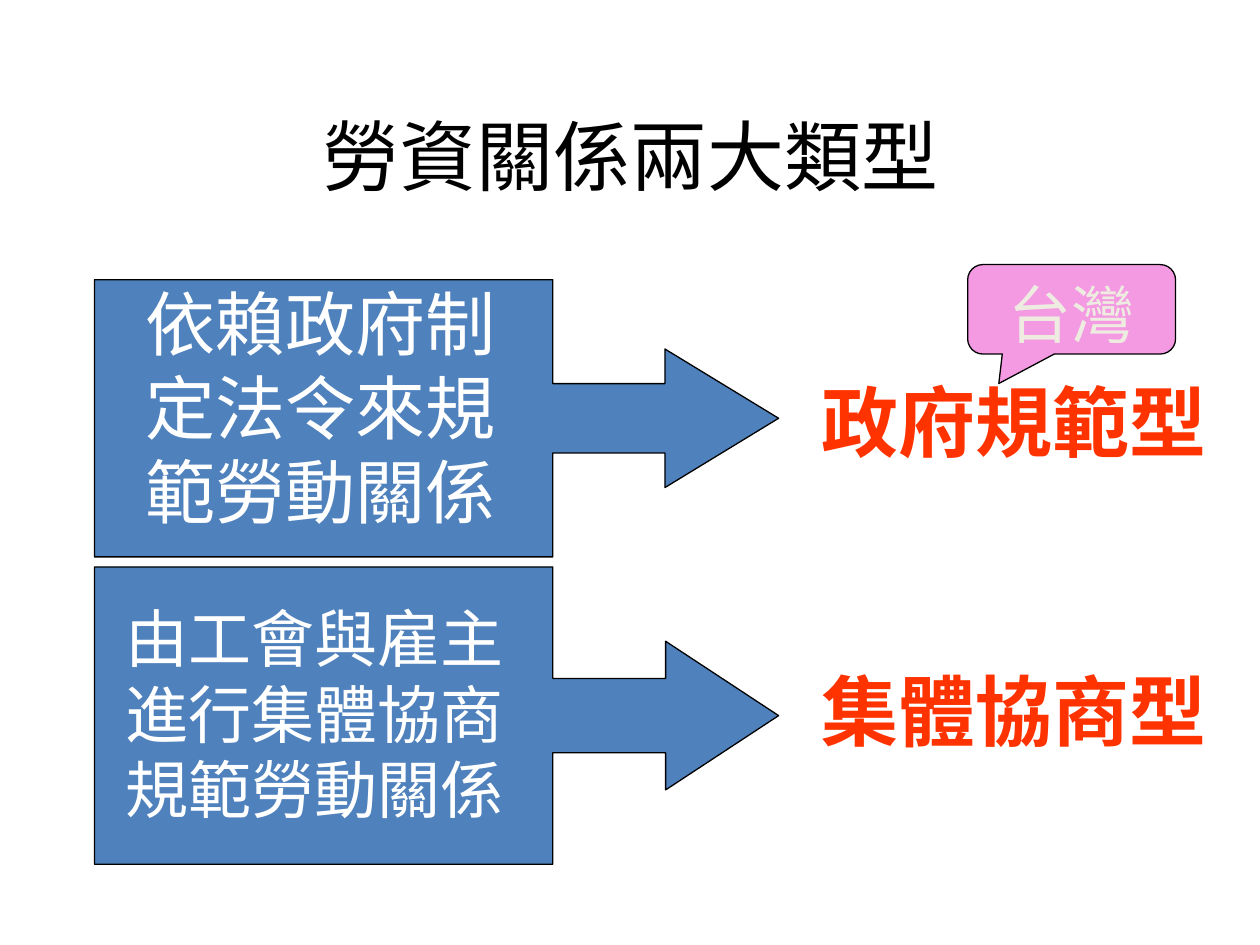
from pptx import Presentation
from pptx.dml.color import RGBColor
from pptx.enum import shapes, text
from pptx.util import Inches, Pt

BLACK, WHITE, BLUE = "000000", "FFFFFF", "4F81BD"
RED, PINK, CREAM = "FF3300", "F49AE3", "EEECE1"

prs = Presentation()
prs.slide_width, prs.slide_height = Inches(10), Inches(7.5)
slide = prs.slides.add_slide(prs.slide_layouts[6])


def write(shape, words, size, color, font="Arial", bold=False,
          align=text.PP_ALIGN.LEFT, anchor=text.MSO_ANCHOR.TOP):
    frame = shape.text_frame
    frame.word_wrap = True
    frame.vertical_anchor = anchor
    paragraph = frame.paragraphs[0]
    paragraph.text = words
    paragraph.alignment = align
    paragraph.font.name = font
    paragraph.font.size = Pt(size)
    paragraph.font.bold = bold
    paragraph.font.color.rgb = RGBColor.from_string(color)


def add_callout(kind, box, fill, adjustments):
    callout = slide.shapes.add_shape(kind, *map(Inches, box))
    callout.shadow.inherit = False
    callout.fill.solid()
    callout.fill.fore_color.rgb = RGBColor.from_string(fill)
    callout.line.color.rgb = RGBColor.from_string(BLACK)
    callout.line.width = Pt(0.75)
    for index, value in enumerate(adjustments):
        callout.adjustments[index] = value
    return callout


title = slide.shapes.add_textbox(Inches(0.51), Inches(0.6), Inches(9), Inches(1.25))
write(title, "勞資關係兩大類型", 44, BLACK, "Calibri",
      align=text.PP_ALIGN.CENTER, anchor=text.MSO_ANCHOR.MIDDLE)

# arrow top, height and head length; description, its box, size and font; type name and its top
relations = [
    (2.22, 2.2, 0.41, "依賴政府制定法令來規範勞動關係",
     (1.06, 2.18, 3.07, 2.12), 40, "Arial", "政府規範型", 2.92),
    (4.5, 2.36, 0.38, "由工會與雇主進行集體協商規範勞動關係",
     (0.9, 4.71, 3.23, 1.92), 36, "Noto Sans CJK SC", "集體協商型", 5.22),
]
for top, height, head, description, box, size, font, type_name, type_top in relations:
    add_callout(shapes.MSO_SHAPE.RIGHT_ARROW_CALLOUT, (0.75, top, 5.43, height),
                BLUE, (0.25, 0.25, head, 0.67))
    detail = slide.shapes.add_textbox(*map(Inches, box))
    write(detail, description, size, WHITE, font)
    type_label = slide.shapes.add_textbox(
        Inches(6.42), Inches(type_top), Inches(3.35), Inches(0.83))
    write(type_label, type_name, 44, RED, bold=True)

taiwan = add_callout(shapes.MSO_SHAPE.ROUNDED_RECTANGULAR_CALLOUT,
                     (7.68, 2.1, 1.65, 0.71), PINK, (-0.35, 0.83, 0.17))
write(taiwan, "台灣", 36, CREAM, align=text.PP_ALIGN.CENTER)

prs.save("out.pptx")
